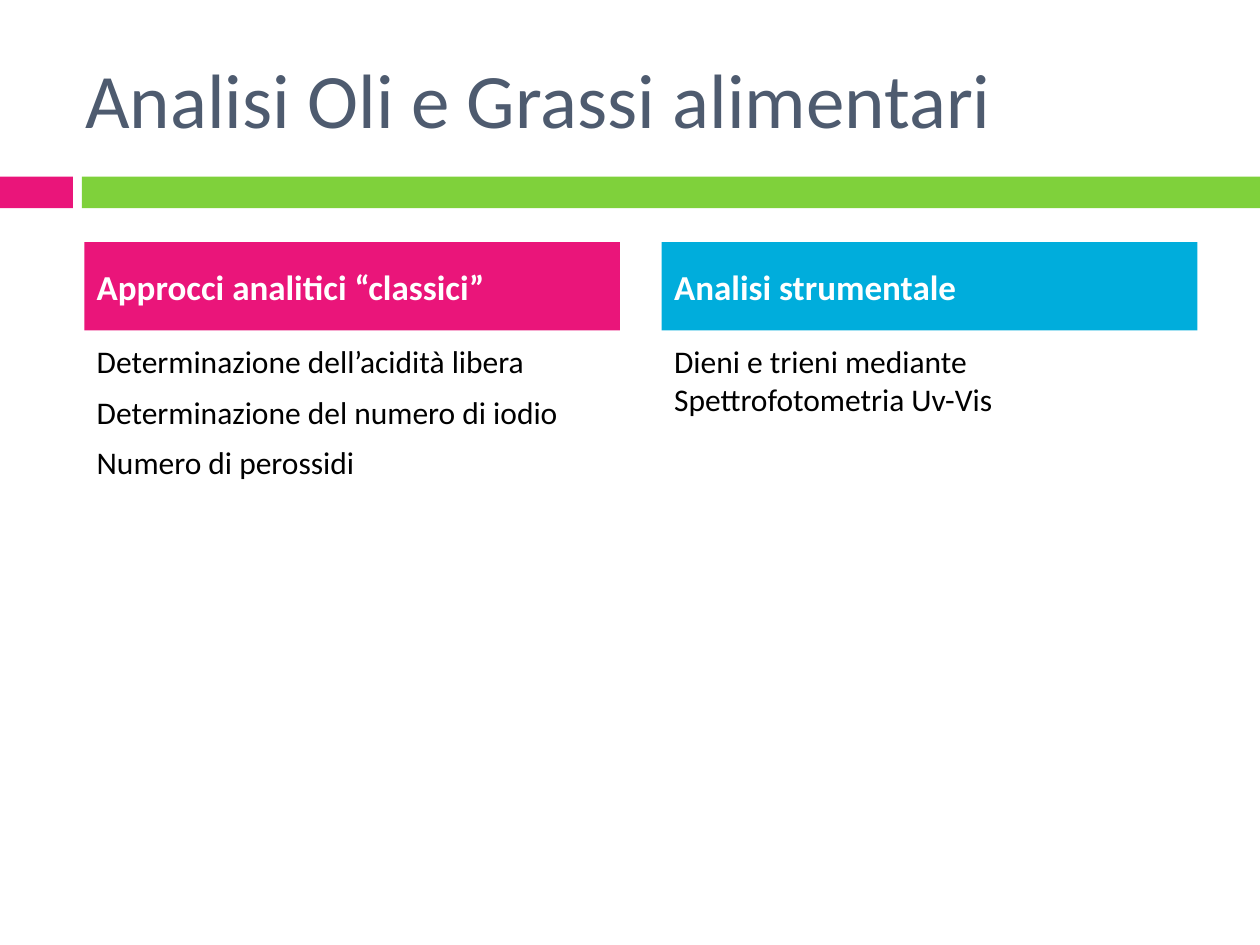
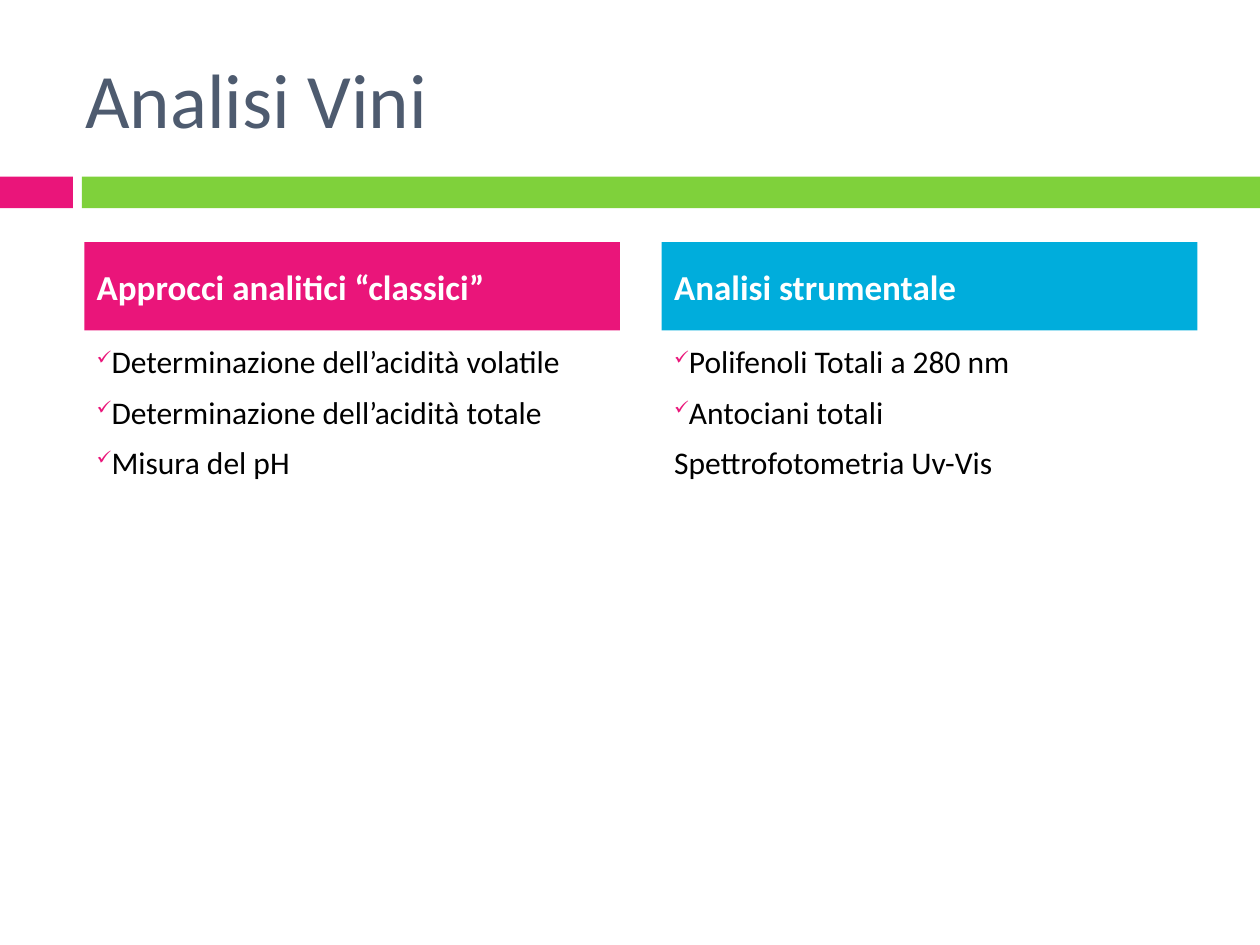
from lxml.etree import SubElement
from pptx import Presentation
from pptx.dml.color import RGBColor
from pptx.enum.shapes import MSO_SHAPE as Shape
from pptx.enum.text import MSO_ANCHOR as Anchor, PP_ALIGN as Align
from pptx.oxml.ns import qn
from pptx.util import Cm, Pt

PINK = RGBColor(0xEA, 0x15, 0x7A)
GREEN = RGBColor(0x7F, 0xD1, 0x3B)
BLUE = RGBColor(0x00, 0xAD, 0xDC)
SLATE = RGBColor(0x4E, 0x5B, 0x6F)
BLACK = RGBColor(0, 0, 0)
WHITE = RGBColor(0xFF, 0xFF, 0xFF)

PAGE_WIDTH, PAGE_HEIGHT = 25.4, 19.05
COLUMN_LEFT, COLUMN_WIDTH, COLUMN_STEP = 1.7, 10.8, 11.64
HEADINGS = [("Approcci analitici “classici”", PINK), ("Analisi strumentale", BLUE)]
CHECK = "✓"

ANALYSES = [
    ("Analisi Oli e Grassi alimentari", [
        [("", "Determinazione dell’acidità libera"),
         ("", "Determinazione del numero di iodio"),
         ("", "Numero di perossidi")],
        [("", "Dieni e trieni mediante Spettrofotometria Uv-Vis")],
    ]),
    ("Analisi Vini", [
        [(CHECK, "Determinazione dell’acidità volatile"),
         (CHECK, "Determinazione dell’acidità totale"),
         (CHECK, "Misura del pH")],
        [(CHECK, "Polifenoli Totali a 280 nm"),
         (CHECK, "Antociani totali"),
         ("", "Spettrofotometria Uv-Vis")],
    ]),
]


class Slides:
    font = "Calibri"

    def __init__(self):
        self.deck = Presentation()
        self.deck.slide_width = Cm(PAGE_WIDTH)
        self.deck.slide_height = Cm(PAGE_HEIGHT)
        self.page = None

    def add_page(self, title):
        self.page = self.deck.slides.add_slide(self.deck.slide_layouts[6])
        self.add_band(0, 3.56, 1.47, 0.64, PINK)
        self.add_band(1.65, 3.56, PAGE_WIDTH - 1.65, 0.64, GREEN)
        box = self.add_text_box(1.47, 0.76, 22.66, 2.41)
        box.text_frame.vertical_anchor = Anchor.MIDDLE
        box.text_frame.text = title
        self.style(box.text_frame.paragraphs[0], 44, SLATE)

    def add_band(self, left, top, width, height, color):
        box = self.page.shapes.add_shape(
            Shape.RECTANGLE, Cm(left), Cm(top), Cm(width), Cm(height))
        box.shadow.inherit = False
        box.fill.solid()
        box.fill.fore_color.rgb = color
        box.line.fill.background()
        return box

    def add_text_box(self, left, top, width, height):
        box = self.page.shapes.add_textbox(Cm(left), Cm(top), Cm(width), Cm(height))
        box.text_frame.word_wrap = True
        return box

    def add_heading(self, left, text, color):
        frame = self.add_band(left, 4.88, COLUMN_WIDTH, 1.78, color).text_frame
        frame.vertical_anchor = Anchor.MIDDLE
        frame.text = text
        self.style(frame.paragraphs[0], 20, WHITE, bold=True, before=7)

    def add_list(self, left, items):
        frame = self.add_text_box(left, 6.78, COLUMN_WIDTH, 9.96).text_frame
        frame.text = "\n".join(text for _, text in items)
        for para, (mark, _) in zip(frame.paragraphs, items):
            self.style(para, 18, BLACK, before=7)
            if mark:
                self.add_bullet(para, mark)

    def add_bullet(self, para, mark):
        props = para._p.get_or_add_pPr()
        SubElement(SubElement(props, qn("a:buClr")), qn("a:srgbClr"), val=str(PINK))
        SubElement(props, qn("a:buSzPct"), val="60000")
        SubElement(props, qn("a:buChar"), char=mark)

    def style(self, para, size, color, bold=False, before=0):
        para.alignment = Align.LEFT
        para.space_before = Pt(before)
        for span in para.runs:
            span.font.name = self.font
            span.font.size = Pt(size)
            span.font.bold = bold
            span.font.color.rgb = color


def main():
    slides = Slides()
    for title, columns in ANALYSES:
        slides.add_page(title)
        for index, ((heading, color), items) in enumerate(zip(HEADINGS, columns)):
            left = COLUMN_LEFT + index * COLUMN_STEP
            slides.add_heading(left, heading, color)
            slides.add_list(left, items)
    slides.deck.save("out.pptx")


if __name__ == "__main__":
    main()
